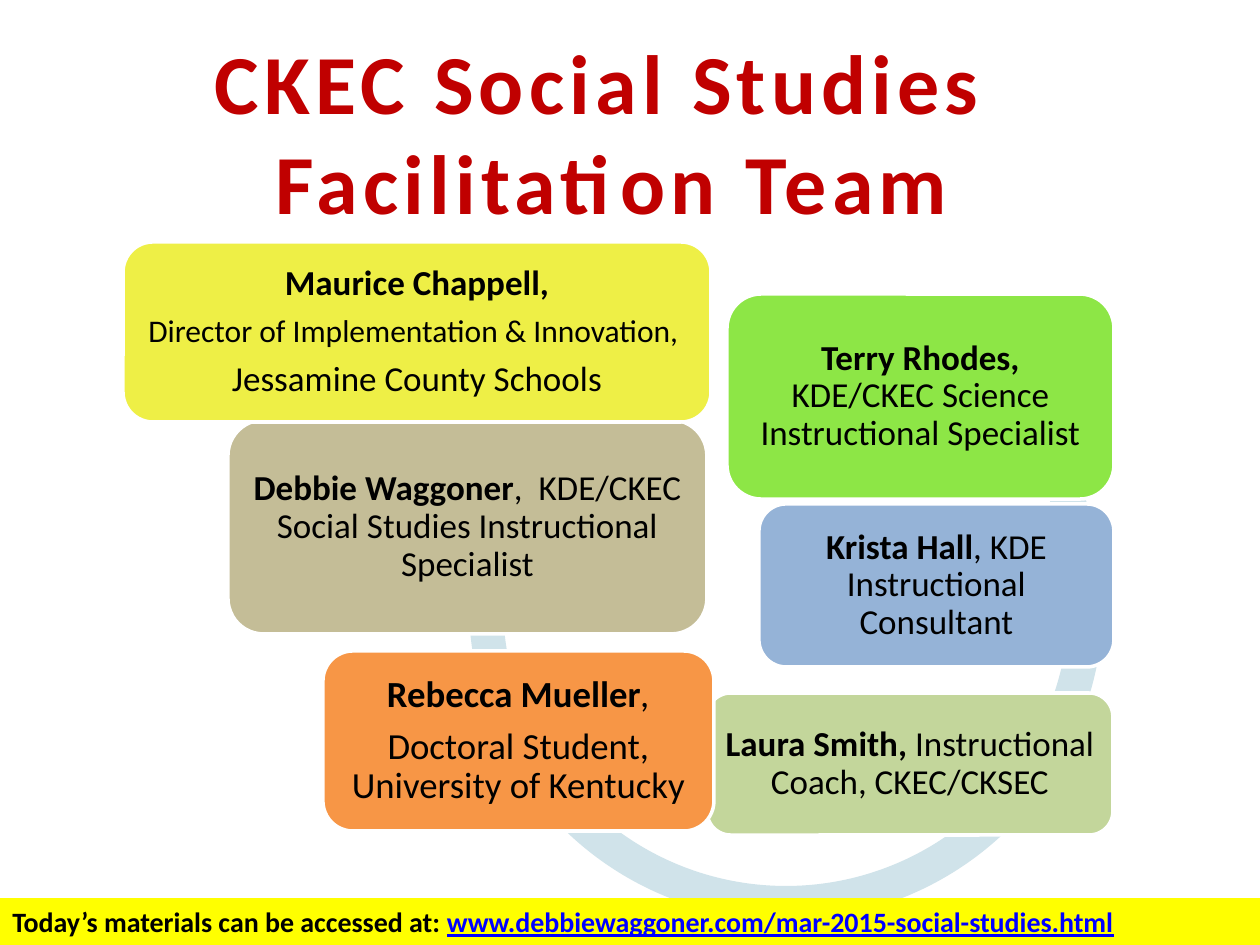
import pptx
import pptx.util
import pptx.dml.color
import pptx.enum.shapes
import pptx.enum.text

RGB = pptx.dml.color.RGBColor
KIND = pptx.enum.shapes.MSO_SHAPE
ALIGN = pptx.enum.text.PP_ALIGN
ANCHOR = pptx.enum.text.MSO_ANCHOR
Pt = pptx.util.Pt

SCALE = 914400 / 126  # EMU per px
RED = RGB(0xC0, 0x00, 0x00)
BLACK = RGB(0x00, 0x00, 0x00)
WHITE = RGB(0xFF, 0xFF, 0xFF)
BLUE = RGB(0x00, 0x00, 0xFF)
PALE = RGB(0xD0, 0xE3, 0xEA)
TAN = RGB(0xC4, 0xBD, 0x97)
STEEL = RGB(0x95, 0xB3, 0xD7)
SAGE = RGB(0xC3, 0xD6, 0x9B)
LIME = RGB(0x8D, 0xE6, 0x46)
LEMON = RGB(0xEE, 0xEF, 0x46)
ORANGE = RGB(0xF7, 0x96, 0x46)
YELLOW = RGB(0xFF, 0xFF, 0x00)


def px(n):
    return pptx.util.Emu(round(n * SCALE))


def draw(kind, box, fill):
    shape = slide.shapes.add_shape(kind, *map(px, box))
    shape.shadow.inherit = False
    shape.fill.solid()
    shape.fill.fore_color.rgb = fill
    shape.line.fill.background()
    return shape


deck = pptx.Presentation()
deck.slide_width, deck.slide_height = px(1260), px(945)
slide = deck.slides.add_slide(deck.slide_layouts[5])

# Title
title = slide.shapes.title
title.left, title.top, title.width, title.height = map(px, (105, 63, 990, 136))
frame = title.text_frame
frame.text = "CKEC Social Studies\v Facilitation Team"
frame.auto_size = pptx.enum.text.MSO_AUTO_SIZE.NONE
frame.vertical_anchor = ANCHOR.MIDDLE
para = frame.paragraphs[0]
para.alignment = ALIGN.CENTER
para.font.name, para.font.size, para.font.bold = "Calibri", Pt(48), True
para.font.color.rgb = RED
for run in para.runs:
    run._r.get_or_add_rPr().set("spc", "300")

# Ring behind the team
ring = draw(KIND.CIRCULAR_ARROW, (445, 262, 682, 682), PALE)
for i, value in enumerate((0.05, 3.13, 124.99, 182.35, 0.06)):
    ring.adjustments[i] = value

# Team cards: box, fill, inset, paragraphs of (size, bold text, plain text)
cards = [
    ((228, 420, 479, 214), TAN, 10,
     [(20, "Debbie Waggoner", ",  KDE/CKEC Social Studies Instructional Specialist")]),
    ((759, 504, 355, 163), STEEL, 10,
     [(20, "Krista Hall", ", KDE Instructional Consultant")]),
    ((707, 693, 406, 142), SAGE, 10,
     [(20, "Laura Smith, ", "Instructional Coach, CKEC/CKSEC")]),
    ((727, 294, 387, 205), LIME, 10,
     [(20, "Terry Rhodes, ", "KDE/CKEC Science Instructional Specialist")]),
    ((123, 242, 588, 180), LEMON, 10,
     [(20, "Maurice Chappell,", ""),
      (18, "", "Director of Implementation & Innovation, "),
      (20, "", "Jessamine County Schools")]),
    ((323, 651, 391, 180), ORANGE, 11,
     [(21, "Rebecca Mueller", ","),
      (21, "", "Doctoral Student, University of Kentucky")]),
]
for box, fill, inset, lines in cards:
    card = draw(KIND.ROUNDED_RECTANGLE, box, fill)
    card.line.color.rgb = WHITE
    card.line.width = Pt(2)
    frame = card.text_frame
    frame.word_wrap = True
    frame.vertical_anchor = ANCHOR.MIDDLE
    frame.margin_left = frame.margin_right = px(inset)
    frame.margin_top = frame.margin_bottom = px(inset)
    for i, (size, name, role) in enumerate(lines):
        para = frame.add_paragraph() if i else frame.paragraphs[0]
        para.alignment = ALIGN.CENTER
        para.line_spacing = 0.9
        para.space_after = Pt(7)
        para.font.name, para.font.size = "Calibri", Pt(size)
        para.font.color.rgb = BLACK
        for text, bold in ((name, True), (role, False)):
            if text:
                run = para.add_run()
                run.text, run.font.bold = text, bold
                run.font.italic = True if text == "," else None

# Footer bar with the web address
bar = draw(KIND.RECTANGLE, (0, 898, 1260, 47), YELLOW)
frame = bar.text_frame
frame.word_wrap = True
frame.vertical_anchor = ANCHOR.TOP
para = frame.paragraphs[0]
para.alignment = ALIGN.LEFT
para.font.name, para.font.size, para.font.bold = "Calibri", Pt(16), True
for text, color, under in (
    ("Today’s materials can be accessed at: ", BLACK, False),
    ("www.debbiewaggoner.com/mar-2015-social-studies.html", BLUE, True),
):
    run = para.add_run()
    run.text, run.font.underline = text, under
    run.font.color.rgb = color

deck.save("out.pptx")
